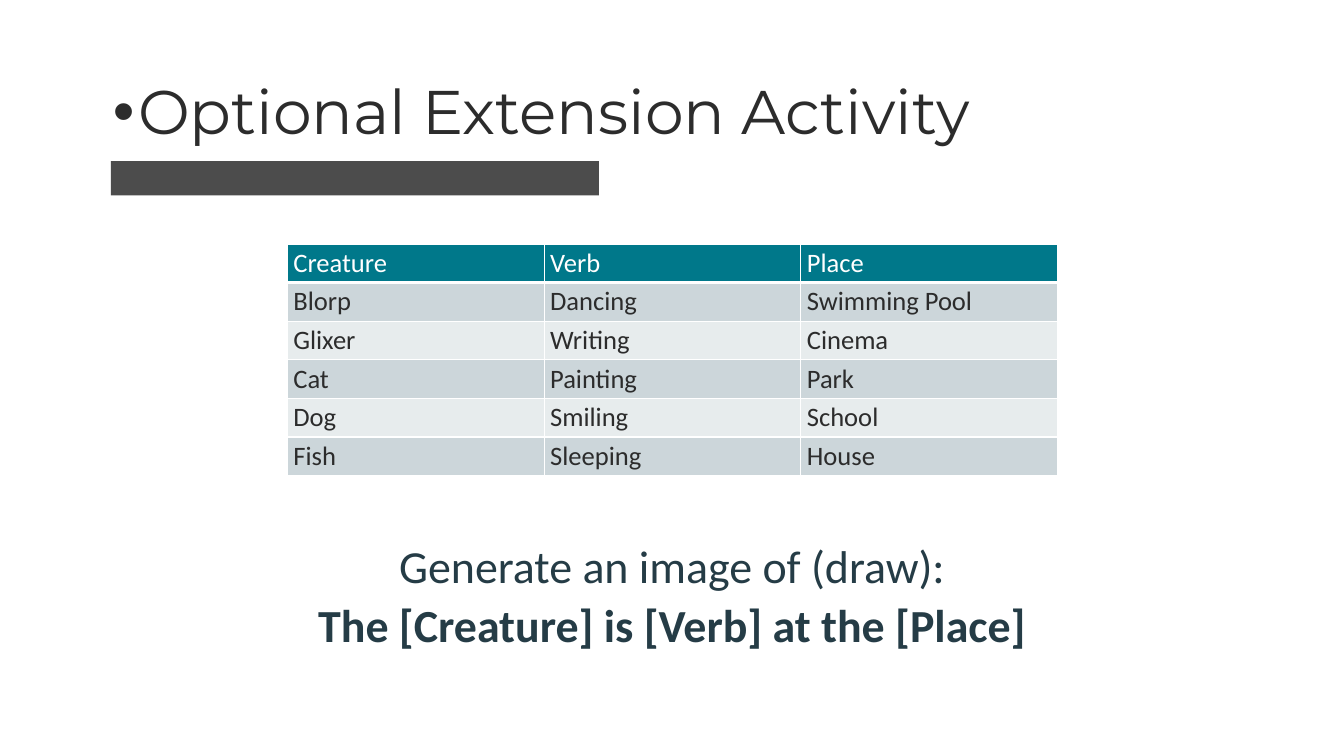
from pptx import Presentation
from pptx.dml.color import RGBColor
from pptx.enum.shapes import MSO_SHAPE
from pptx.enum.text import MSO_ANCHOR, PP_ALIGN
from pptx.oxml import parse_xml
from pptx.oxml.ns import nsdecls
from pptx.util import Inches, Pt


def color(value):
    return RGBColor.from_string(value)


def write(para, text, tint, **formats):
    span = para.add_run()
    span.text = text
    span.font.color.rgb = color(tint)
    for name, value in formats.items():
        setattr(span.font, name, value)


deck = Presentation()
deck.slide_width, deck.slide_height = Inches(13.33), Inches(7.5)
page = deck.slides.add_slide(deck.slide_layouts[5])

# Bar under the title
bar = page.shapes.add_shape(MSO_SHAPE.RECTANGLE, Inches(1.1), Inches(1.6),
                            Inches(4.84), Inches(0.34))
bar.shadow.inherit = False
bar.fill.solid()
bar.fill.fore_color.rgb = color("4C4C4C")
bar.line.fill.background()

# Bulleted title
title = page.shapes.title
title.left, title.top = Inches(1.02), Inches(0.76)
title.width, title.height = Inches(13.33), Inches(0.88)
title.text_frame.vertical_anchor = MSO_ANCHOR.TOP
para = title.text_frame.paragraphs[0]
properties = para._p.get_or_add_pPr()
properties.set("marL", str(Inches(0.25)))
properties.set("indent", str(Inches(-0.25)))
properties.append(parse_xml(f'<a:buFont {nsdecls("a")} typeface="Arial"/>'))
properties.append(parse_xml(f'<a:buChar {nsdecls("a")} char="•"/>'))
para.alignment = PP_ALIGN.LEFT
para.line_spacing = 0.9
write(para, "Optional Extension Activity", "2C2C2C", size=Pt(44), name="Montserrat")

# Table of words to combine
words = [
    ("Creature", "Verb", "Place"),
    ("Blorp", "Dancing", "Swimming Pool"),
    ("Glixer", "Writing", "Cinema"),
    ("Cat", "Painting", "Park"),
    ("Dog", "Smiling", "School"),
    ("Fish", "Sleeping", "House"),
]
margins = {"margin_left": 0.06, "margin_right": 0.06,
           "margin_top": 0.03, "margin_bottom": 0.03}
table = page.shapes.add_table(len(words), 3, Inches(2.85), Inches(2.42),
                              Inches(7.64), Inches(2.3)).table
for row, entries in enumerate(words):
    header = row == 0
    fill = "00788A" if header else ("E7ECED", "CCD6DA")[row % 2]
    for column, word in enumerate(entries):
        cell = table.cell(row, column)
        for name, value in margins.items():
            setattr(cell, name, Inches(value))
        for side in "LRTB":
            width = Pt(3 if header and side == "B" else 1)
            cell._tc.get_or_add_tcPr().append(parse_xml(
                f'<a:ln{side} {nsdecls("a")} w="{width}"><a:solidFill>'
                f'<a:srgbClr val="FFFFFF"/></a:solidFill></a:ln{side}>'))
        cell.fill.solid()
        cell.fill.fore_color.rgb = color(fill)
        write(cell.text_frame.paragraphs[0], word, "FFFFFF" if header else "2C2C2C",
              size=Pt(19), name="Calibri", bold=False)

# Drawing prompt
prompts = [
    (5.03, "The [Creature] is [Verb] at the [Place]", True),
    (4.44, "Generate an image of (draw):", False),
]
for top, text, bold in prompts:
    box = page.shapes.add_textbox(0, Inches(top), Inches(13.33), Inches(1.03))
    box.text_frame.word_wrap = True
    para = box.text_frame.paragraphs[0]
    para.alignment = PP_ALIGN.CENTER
    para.line_spacing = Pt(100)
    write(para, text, "253C46", size=Pt(32.8), name="Calibri", bold=bold)

deck.save("out.pptx")
